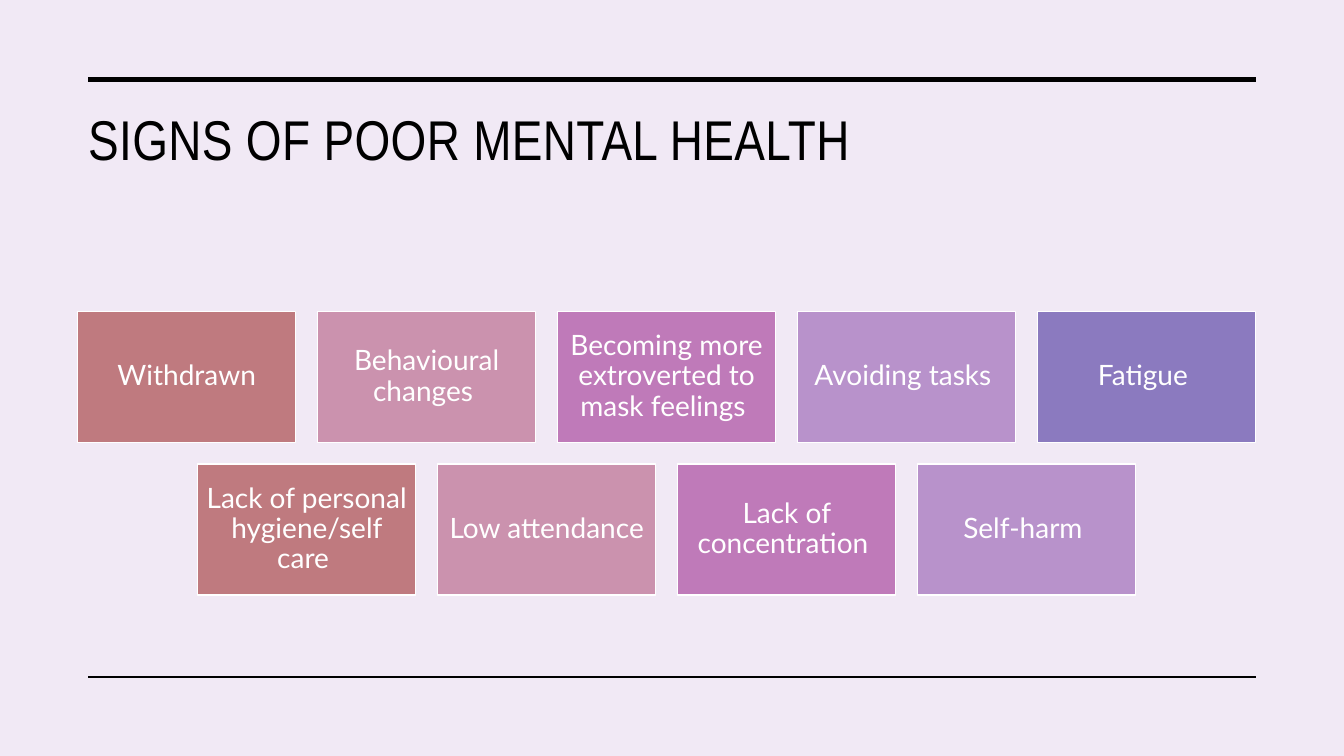
from dataclasses import dataclass

from pptx import Presentation
from pptx.dml.color import RGBColor
from pptx.enum.shapes import MSO_CONNECTOR, MSO_SHAPE
from pptx.enum.text import MSO_ANCHOR, MSO_AUTO_SIZE, PP_ALIGN
from pptx.oxml.ns import qn
from pptx.slide import Slide
from pptx.text.text import TextFrame
from pptx.util import Pt
from lxml.etree import SubElement


@dataclass(frozen=True)
class Theme:
    background: str = "F1E9F5"
    ink: str = "000000"
    paper: str = "FFFFFF"
    cards: tuple[str, ...] = ("BF7A7F", "CB92AE", "BF7AB9", "B892CB", "8B7ABF")
    title_font: str = "Arial Narrow"
    card_font: str = "Lato"
    title_size: float = 40
    card_size: float = 20


@dataclass(frozen=True)
class Rule:
    top: float
    weight: float


@dataclass(frozen=True)
class Card:
    text: str
    color: str
    left: float
    top: float


THEME = Theme()
SLIDE_WIDTH, SLIDE_HEIGHT = 960, 540

# Rules above and below the content
RULE_LEFT, RULE_RIGHT = 63, 897
RULES = (Rule(56.7, 3.5), Rule(483.6, 1))

# Card grid: each row is centred on the same axis
CARD_WIDTH, CARD_HEIGHT, GAP = 155.8, 93.5, 15.58
GRID_CENTER, GRID_TOP = 476.2, 222.5
CARD_INSET = 6
SIGN_ROWS = (
    (
        "Withdrawn",
        "Behavioural changes ",
        "Becoming more extroverted to mask feelings ",
        "Avoiding tasks ",
        "Fatigue ",
    ),
    (
        "Lack of personal hygiene/self care ",
        "Low attendance ",
        "Lack of concentration ",
        "Self-harm ",
    ),
)


def color(value: str) -> RGBColor:
    return RGBColor.from_string(value)


def write(frame: TextFrame, text: str, font: str, size: float, ink: str,
          align: PP_ALIGN, line_spacing: float, tracking: int = 0) -> None:
    frame.word_wrap = True
    frame.auto_size = MSO_AUTO_SIZE.NONE
    paragraph = frame.paragraphs[0]
    paragraph.alignment = align
    paragraph.line_spacing = line_spacing
    run = paragraph.add_run()
    run.text = text
    run.font.name = font
    run.font.size = Pt(size)
    run.font.color.rgb = color(ink)
    if tracking:
        run.font._element.set("spc", str(tracking))


def add_rule(slide: Slide, rule: Rule) -> None:
    line = slide.shapes.add_connector(
        MSO_CONNECTOR.STRAIGHT,
        Pt(RULE_LEFT), Pt(rule.top), Pt(RULE_RIGHT), Pt(rule.top),
    )
    line.line.color.rgb = color(THEME.ink)
    line.line.width = Pt(rule.weight)
    SubElement(line._element.spPr, qn("a:effectLst"))


def add_title(slide: Slide, text: str) -> None:
    title = slide.shapes.title
    title.left, title.top = Pt(55.8), Pt(71.3)
    title.width, title.height = Pt(841.7), Pt(90.7)
    title.text_frame.vertical_anchor = MSO_ANCHOR.TOP
    write(title.text_frame, text, THEME.title_font, THEME.title_size,
          THEME.ink, PP_ALIGN.LEFT, 1.0, tracking=30)


def card_grid() -> list[Card]:
    cards = []
    for row, signs in enumerate(SIGN_ROWS):
        row_width = len(signs) * (CARD_WIDTH + GAP) - GAP
        left = GRID_CENTER - row_width / 2
        top = GRID_TOP + row * (CARD_HEIGHT + GAP)
        for column, (sign, fill) in enumerate(zip(signs, THEME.cards)):
            cards.append(Card(sign, fill, left + column * (CARD_WIDTH + GAP), top))
    return cards


def add_card(slide: Slide, card: Card) -> None:
    shape = slide.shapes.add_shape(
        MSO_SHAPE.RECTANGLE,
        Pt(card.left), Pt(card.top), Pt(CARD_WIDTH), Pt(CARD_HEIGHT),
    )
    shape.shadow.inherit = False
    shape.fill.solid()
    shape.fill.fore_color.rgb = color(card.color)
    shape.line.color.rgb = color(THEME.paper)
    shape.line.width = Pt(1)
    frame = shape.text_frame
    frame.margin_left = frame.margin_right = Pt(CARD_INSET)
    frame.margin_top = frame.margin_bottom = Pt(CARD_INSET)
    frame.vertical_anchor = MSO_ANCHOR.MIDDLE
    write(frame, card.text, THEME.card_font, THEME.card_size,
          THEME.paper, PP_ALIGN.CENTER, 0.9)


def main() -> None:
    presentation = Presentation()
    presentation.slide_width = Pt(SLIDE_WIDTH)
    presentation.slide_height = Pt(SLIDE_HEIGHT)
    title_only = presentation.slide_layouts.get_by_name("Title Only")
    slide = presentation.slides.add_slide(title_only)
    slide.background.fill.solid()
    slide.background.fill.fore_color.rgb = color(THEME.background)

    for rule in RULES:
        add_rule(slide, rule)
    add_title(slide, "SIGNS OF POOR MENTAL HEALTH")
    for card in card_grid():
        add_card(slide, card)

    presentation.save("out.pptx")


if __name__ == "__main__":
    main()
